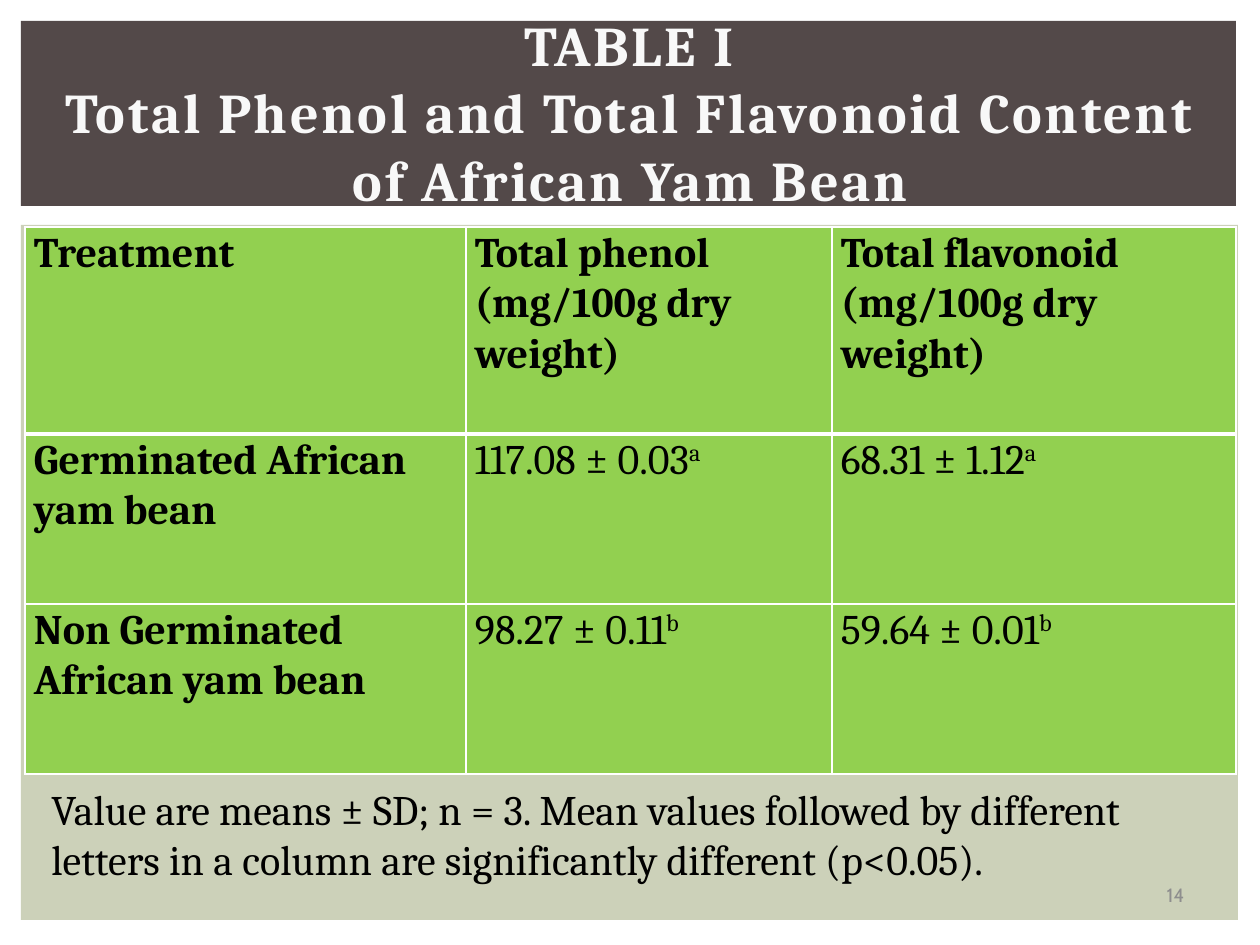
from pptx import Presentation
from pptx.dml.color import RGBColor
from pptx.enum.shapes import MSO_SHAPE
from pptx.enum.text import MSO_ANCHOR, MSO_AUTO_SIZE, PP_ALIGN
from pptx.oxml import parse_xml
from pptx.oxml.ns import nsdecls
from pptx.util import Emu, Pt


def px(*sizes):
    return [Emu(round(n * 914400 / 126)) for n in sizes]


def write(frame, text, size=24, font="Cambria", color="000000", bold=False,
          align=PP_ALIGN.LEFT, lead=1.0, gap=0, sup=""):
    frame.word_wrap = True
    para = frame.paragraphs[0]
    para.alignment = align
    para.line_spacing = lead
    lines = text.split("\n")
    runs = [(line, 0) for line in lines] + ([(sup, 30000)] if sup else [])
    for i, (words, base) in enumerate(runs):
        if 0 < i < len(lines):
            para.add_line_break()
        run = para.add_run()
        run.text = words
        run.font.size, run.font.name, run.font.bold = Pt(size), font, bold
        run.font.color.rgb = RGBColor.from_string(color)
        props = run.font._element
        if gap:
            props.set("spc", str(gap))
        if base:
            props.set("baseline", str(base))


deck = Presentation()
deck.slide_width, deck.slide_height = px(1260, 945)
slide = deck.slides.add_slide(deck.slide_layouts[5])
shapes = slide.shapes

# Panel and title band
for box, color in [((21, 225, 1217, 695), "CCD1B9"),
                   ((21, 21, 1215, 185), "534949")]:
    rect = shapes.add_shape(MSO_SHAPE.RECTANGLE, *px(*box))
    rect.shadow.inherit = False
    rect.fill.solid()
    rect.fill.fore_color.rgb = RGBColor.from_string(color)
    rect.line.fill.background()

# Title, brought in front of its band
title = shapes.title
title.left, title.top, title.width, title.height = px(20, 29, 1221, 165)
rect._element.addnext(title._element)
frame = title.text_frame
frame.auto_size = MSO_AUTO_SIZE.NONE
frame.vertical_anchor = MSO_ANCHOR.MIDDLE
write(frame, "TABLE I\nTotal Phenol and Total Flavonoid Content of African Yam Bean",
      size=32, color="F8F8F8", bold=True, align=PP_ALIGN.CENTER, gap=150)

# Table: text and superscript of each cell
rows = [
    [("Treatment", ""), ("Total phenol (mg/100g dry weight)", ""),
     ("Total flavonoid (mg/100g dry weight)", "")],
    [("Germinated African yam bean", ""), ("117.08 ± 0.03", "a"), ("68.31 ± 1.12", "a")],
    [("Non Germinated African yam bean", ""), ("98.27 ± 0.11", "b"), ("59.64 ± 0.01", "b")],
]
table = shapes.add_table(3, 3, *px(25, 227, 1211, 547)).table
for col, width in zip(table.columns, px(441, 366, 404)):
    col.width = width
for row, height in zip(table.rows, px(207, 170, 170)):
    row.height = height

for r, row in enumerate(rows):
    for c, (text, sup) in enumerate(row):
        cell = table.cell(r, c)
        cell.margin_left = cell.margin_right = px(9)[0]
        cell.margin_top = cell.margin_bottom = 0
        write(cell.text_frame, text, bold=r == 0 or c == 0, lead=1.05, sup=sup)
        # White borders, thick under the header
        props = cell._tc.get_or_add_tcPr()
        for side in "LRTB":
            thick = (r, side) in [(0, "B"), (1, "T")]
            props.append(parse_xml(
                f'<a:ln{side} {nsdecls("a")} w="{Pt(3 if thick else 1)}"><a:solidFill>'
                f'<a:srgbClr val="FFFFFF"/></a:solidFill></a:ln{side}>'))
        cell.fill.solid()
        cell.fill.fore_color.rgb = RGBColor.from_string("92D050")

# Note under the table
note = shapes.add_textbox(*px(39, 777, 1201, 115))
write(note.text_frame, "Value are means ± SD; n = 3. Mean values followed by different "
      "letters in a column are significantly different (p<0.05).")

# Page number
page = shapes.add_textbox(*px(1135, 876, 81, 38))
page.text_frame.vertical_anchor = MSO_ANCHOR.MIDDLE
write(page.text_frame, "14", size=11, font="Cabin", color="8E8E8E", align=PP_ALIGN.CENTER)

deck.save("out.pptx")
